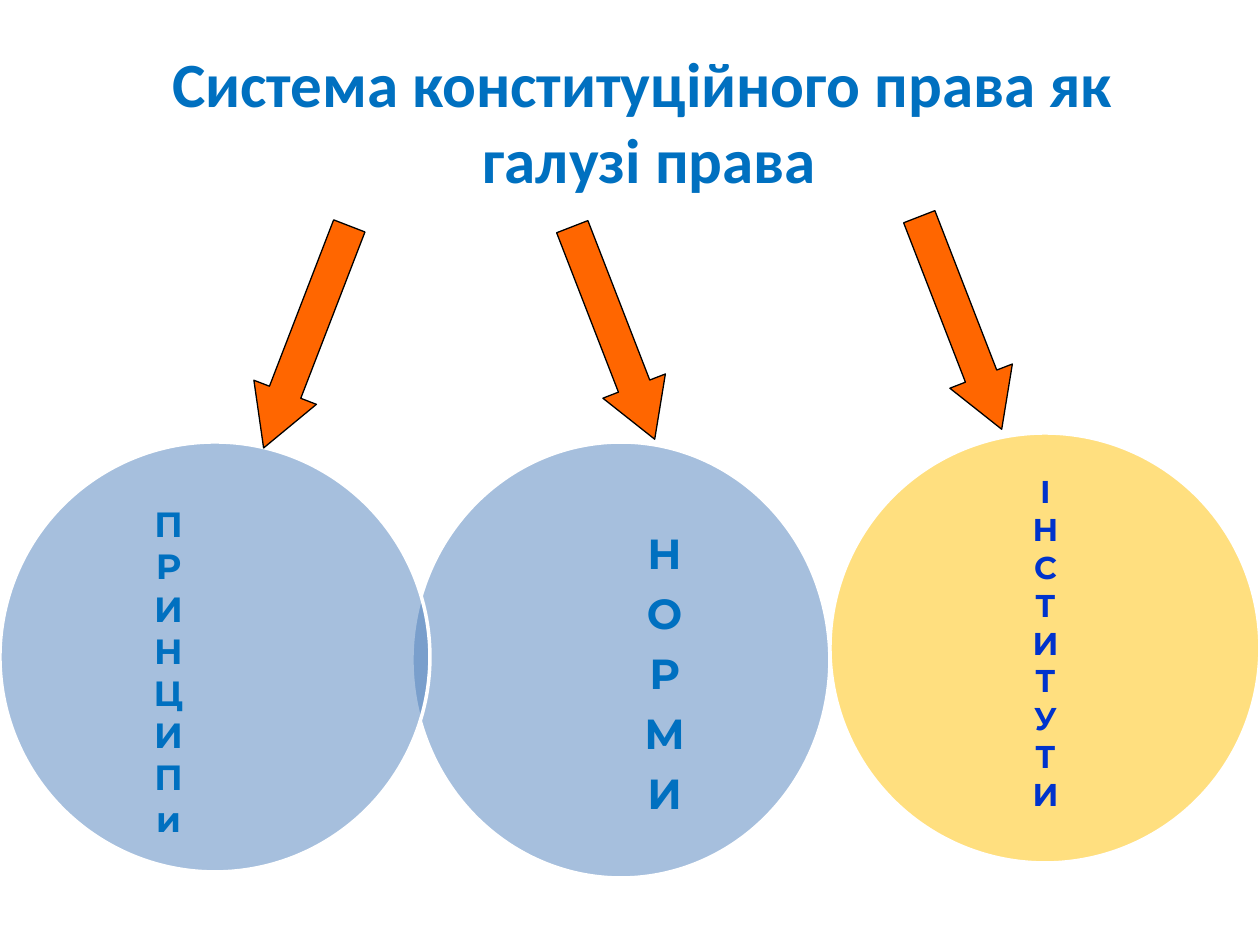
import pptx
import pptx.dml.color
import pptx.enum.shapes
import pptx.enum.text
import pptx.oxml.ns
import pptx.util
from lxml import etree

PX = pptx.util.Inches(1) / 126
COLORS = {
    "blue": "4F81BD",
    "gold": "FFC000",
    "orange": "FF6600",
    "white": "FFFFFF",
    "black": "000000",
    "text_blue": "0070C0",
    "text_navy": "0033CC",
}
SHAPES = pptx.enum.shapes.MSO_SHAPE


def px(*lengths):
    return [round(length * PX) for length in lengths]


def rgb(name):
    return pptx.dml.color.RGBColor.from_string(COLORS[name])


def add_run(paragraph, text, font_name, size, color):
    run = paragraph.add_run()
    run.text = text
    run.font.name = font_name
    run.font.size = pptx.util.Pt(size)
    run.font.bold = True
    run.font.color.rgb = rgb(color)


def add_title(slide, box, lines):
    title = slide.shapes.title
    title.left, title.top, title.width, title.height = px(*box)
    frame = title.text_frame
    frame.word_wrap = True
    frame.auto_size = pptx.enum.text.MSO_AUTO_SIZE.NONE
    frame.vertical_anchor = pptx.enum.text.MSO_ANCHOR.MIDDLE
    paragraph = frame.paragraphs[0]
    paragraph.alignment = pptx.enum.text.PP_ALIGN.CENTER
    for index, line in enumerate(lines):
        if index:
            paragraph.add_line_break()
        add_run(paragraph, line, "Calibri", 36, "text_blue")


def add_filled_shape(slide, kind, box, fill, line, line_width):
    shape = slide.shapes.add_shape(kind, *px(*box))
    shape.shadow.inherit = False
    shape.fill.solid()
    shape.fill.fore_color.rgb = rgb(fill)
    shape.line.color.rgb = rgb(line)
    shape.line.width = pptx.util.Pt(line_width)
    return shape


def add_circle(slide, box, fill):
    """Add a half-transparent circle with a white outline."""
    circle = add_filled_shape(slide, SHAPES.OVAL, box, fill, "white", 2)
    qualified = pptx.oxml.ns.qn
    color = circle.fill._xPr.find(qualified("a:solidFill")).find(qualified("a:srgbClr"))
    etree.SubElement(color, qualified("a:alpha"), val="50000")


def add_vertical_word(slide, box, word, size, color, line_spacing=None, space_after=0):
    """Stack the letters of a word, one paragraph for each."""
    frame = slide.shapes.add_textbox(*px(*box)).text_frame
    frame.word_wrap = True
    frame.vertical_anchor = pptx.enum.text.MSO_ANCHOR.MIDDLE
    frame.margin_left = frame.margin_right = 0
    frame.margin_top = frame.margin_bottom = 0
    for index, letter in enumerate(word):
        paragraph = frame.add_paragraph() if index else frame.paragraphs[0]
        paragraph.alignment = pptx.enum.text.PP_ALIGN.CENTER
        paragraph.line_spacing = line_spacing
        paragraph.space_after = pptx.util.Pt(space_after)
        add_run(paragraph, letter, "Montserrat", size, color)


def add_arrow(slide, box, rotation, head_length):
    arrow = add_filled_shape(slide, SHAPES.DOWN_ARROW, box, "orange", "black", 0.75)
    arrow.adjustments[0] = 0.5
    arrow.adjustments[1] = head_length
    arrow.rotation = rotation


def main():
    presentation = pptx.Presentation()
    presentation.slide_width, presentation.slide_height = px(1260, 945)
    slide = presentation.slides.add_slide(presentation.slide_layouts[5])

    add_title(slide, (25, 42, 1235, 157),
              ["Система конституційного права як", " галузі права"])

    add_circle(slide, (830, 433, 430, 430), "gold")
    add_vertical_word(slide, (888, 546, 315, 193), "ІНСТИТУТИ", 18, "text_navy")

    add_circle(slide, (412, 442, 418, 436), "blue")
    add_vertical_word(slide, (539, 556, 251, 239), "НОРМИ", 24, "text_blue",
                      line_spacing=0.9, space_after=8.4)

    add_circle(slide, (0, 442, 430, 430), "blue")
    add_vertical_word(slide, (40, 553, 257, 236), "ПРИНЦИПи", 20, "text_blue")

    add_arrow(slide, (273, 218, 67, 238), 21.1, 0.89)
    for left, top in ((927, 209), (580, 219)):
        add_arrow(slide, (left, top, 67, 228), 338.8, 0.85)

    presentation.save("out.pptx")


if __name__ == "__main__":
    main()
